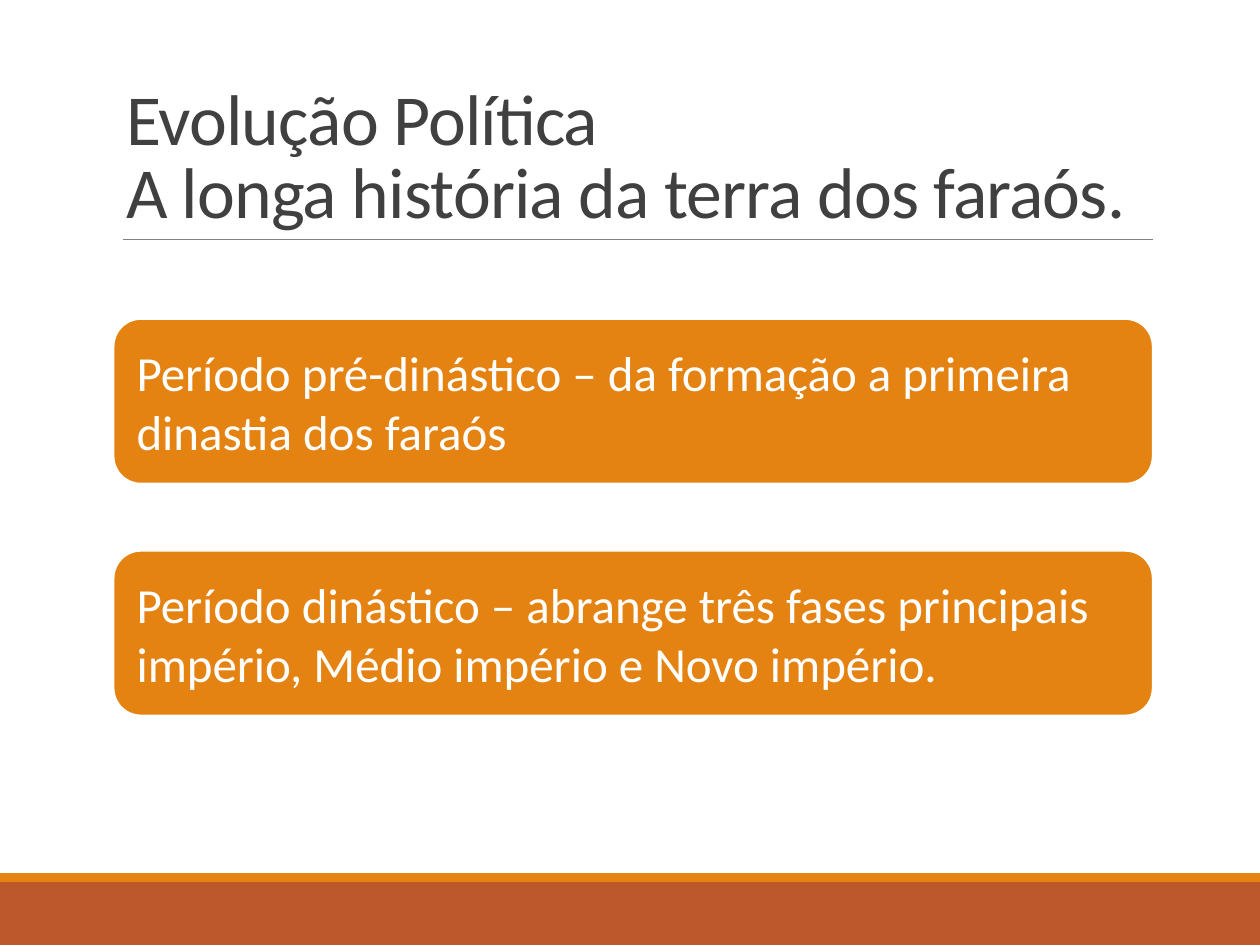
from pptx import Presentation
from pptx.dml.color import RGBColor
from pptx.enum.shapes import MSO_CONNECTOR as Connector, MSO_SHAPE as Shape
from pptx.enum.text import MSO_ANCHOR as Anchor, MSO_AUTO_SIZE as AutoSize, PP_ALIGN as Align
from pptx.oxml.ns import qn
from pptx.util import Inches, Pt
from lxml.etree import SubElement

ORANGE, RUST, WHITE, DARK, GREY = "E48312", "BD582C", "FFFFFF", "404040", "808080"
LEFT, WIDTH = 0.9, 8.25
TITLE_LINES = ["Evolução Política", "A longa história da terra dos faraós."]
PERIODS = [
    "Período pré-dinástico – da formação a primeira dinastia dos faraós",
    "Período dinástico – abrange três fases principais império, Médio império e Novo império.",
]
FIRST_TOP, CARD_HEIGHT, CARD_STEP = 2.53, 1.31, 1.84


def color(hex_code):
    return RGBColor.from_string(hex_code)


class SlideBuilder:
    font_name = "Calibri"

    def __init__(self, slide):
        self.slide = slide

    def add_run(self, paragraph, text, size, hex_code):
        run = paragraph.add_run()
        run.text = text
        run.font.name = self.font_name
        run.font.size = Pt(size)
        run.font.color.rgb = color(hex_code)
        return run

    def block(self, kind, left, top, width, height, fill):
        """Add a filled preset shape without outline or shadow."""
        shape = self.slide.shapes.add_shape(
            kind, Inches(left), Inches(top), Inches(width), Inches(height))
        shape.shadow.inherit = False
        shape.fill.solid()
        shape.fill.fore_color.rgb = color(fill)
        shape.line.fill.background()
        return shape

    def rule(self, left, right, y):
        line = self.slide.shapes.add_connector(
            Connector.STRAIGHT, Inches(left), Inches(y), Inches(right), Inches(y))
        line.line.color.rgb = color(GREY)
        line.line.width = Pt(0.5)
        SubElement(line._element.spPr, qn("a:effectLst"))

    def title(self, lines):
        heading = self.slide.shapes.title
        heading.left, heading.top = Inches(LEFT), Inches(0.31)
        heading.width, heading.height = Inches(WIDTH), Inches(1.59)
        frame = heading.text_frame
        frame.word_wrap = True
        frame.auto_size = AutoSize.NONE
        frame.vertical_anchor = Anchor.BOTTOM
        paragraph = frame.paragraphs[0]
        paragraph.alignment = Align.LEFT
        paragraph.line_spacing = 0.85
        for index, text in enumerate(lines):
            if index:
                paragraph.add_line_break()
            run = self.add_run(paragraph, text, 41, DARK)
            run.font._element.set("spc", "-50")

    def period_card(self, top, text):
        card = self.block(Shape.ROUNDED_RECTANGLE, LEFT, top, WIDTH, CARD_HEIGHT, ORANGE)
        card.line.color.rgb = color(WHITE)
        card.line.width = Pt(1.25)
        frame = card.text_frame
        frame.word_wrap = True
        frame.vertical_anchor = Anchor.MIDDLE
        frame.margin_left = frame.margin_right = Inches(0.12)
        frame.margin_top = frame.margin_bottom = Inches(0.12)
        paragraph = frame.paragraphs[0]
        paragraph.alignment = Align.LEFT
        self.add_run(paragraph, text, 28, WHITE)


def main():
    deck = Presentation()
    deck.slide_width, deck.slide_height = Inches(10), Inches(7.5)
    builder = SlideBuilder(deck.slides.add_slide(deck.slide_layouts[5]))
    builder.block(Shape.RECTANGLE, 0, 7, 10, 0.5, RUST)
    builder.block(Shape.RECTANGLE, 0, 6.93, 10, 0.07, ORANGE)
    builder.rule(0.98, 9.15, 1.9)
    builder.title(TITLE_LINES)
    for index, text in enumerate(PERIODS):
        builder.period_card(FIRST_TOP + index * CARD_STEP, text)
    deck.save("out.pptx")


if __name__ == "__main__":
    main()
